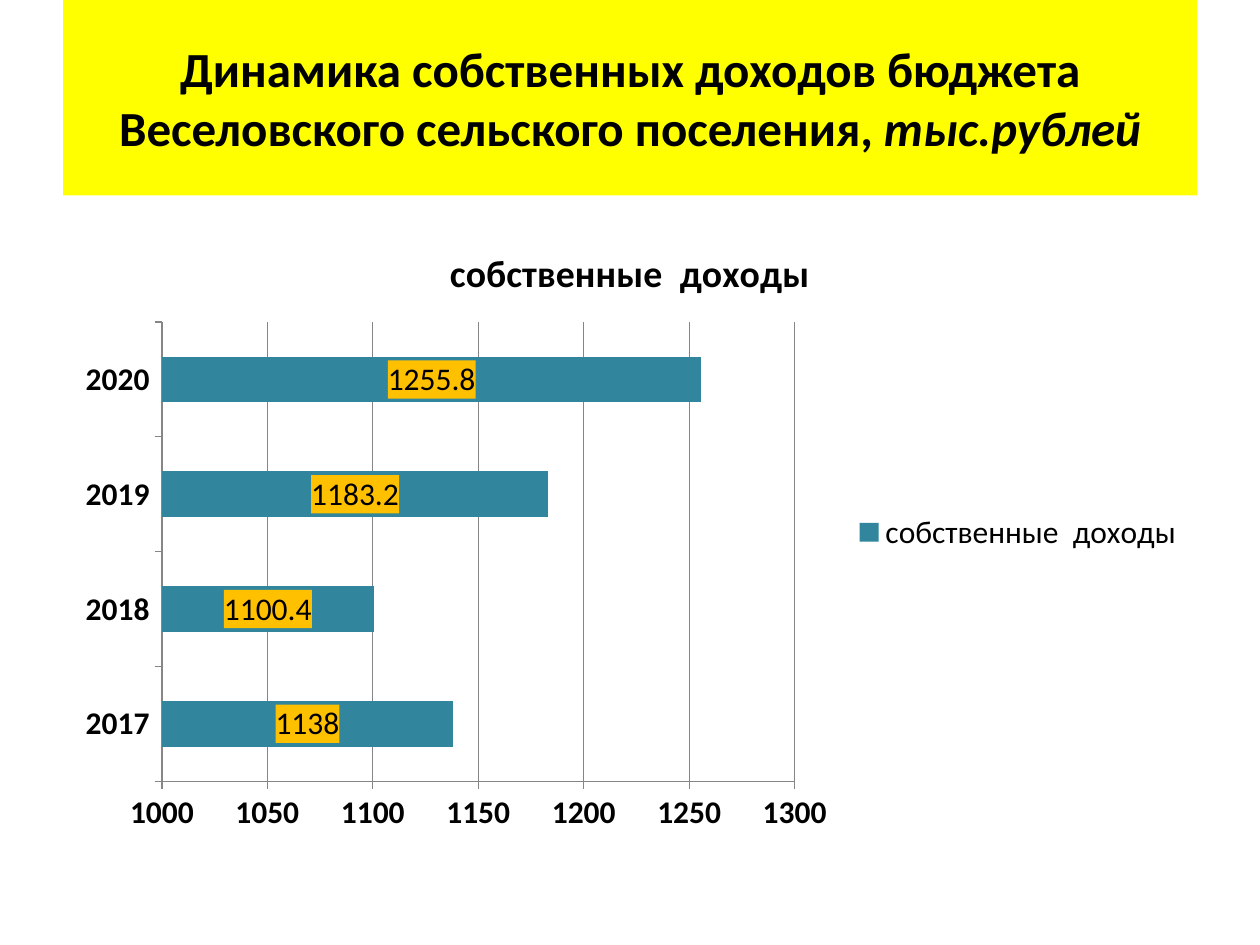
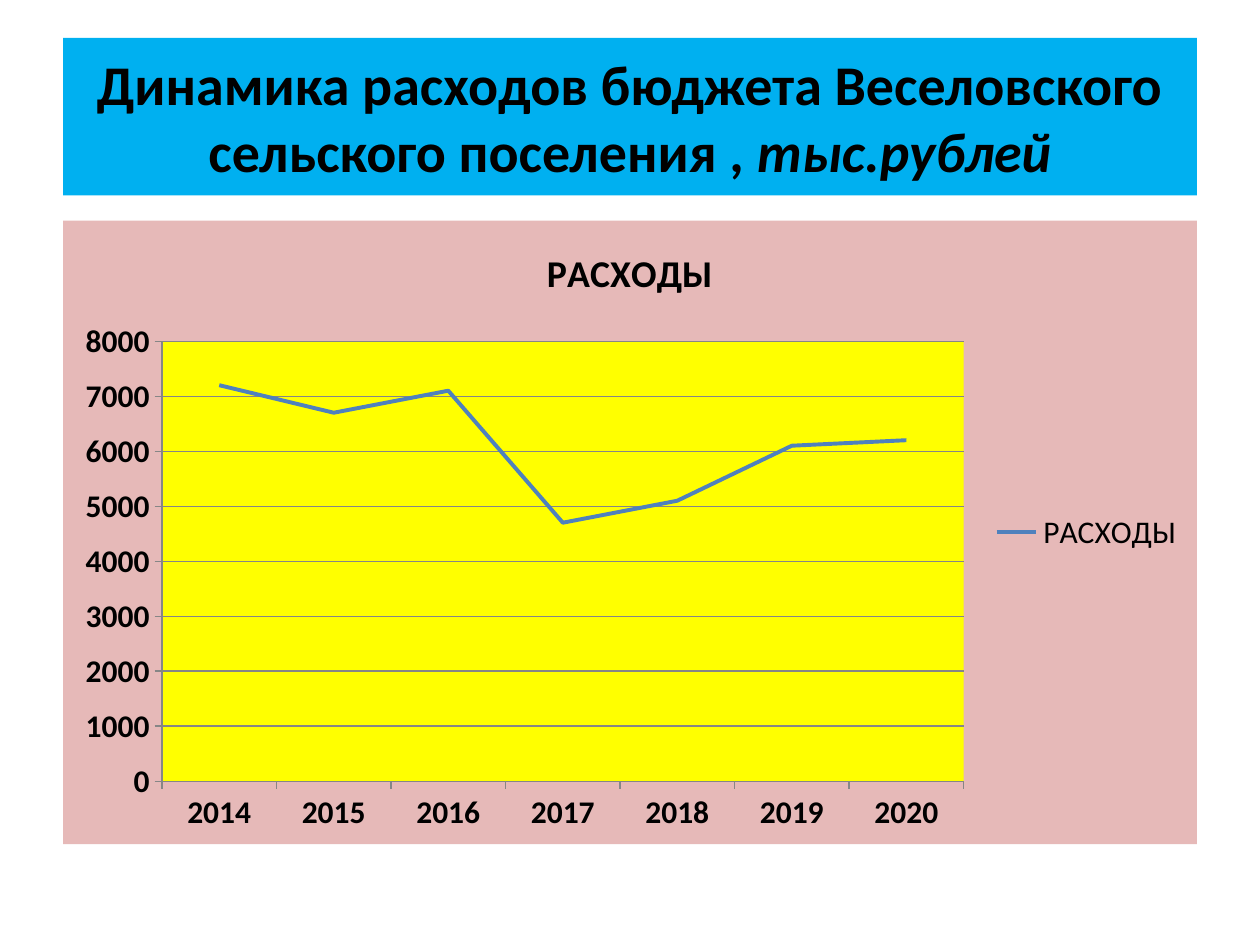
from dataclasses import dataclass
from typing import Optional

from lxml import etree
from pptx import Presentation
from pptx.chart.data import CategoryChartData
from pptx.dml.color import RGBColor
from pptx.enum.chart import (XL_CHART_TYPE, XL_LABEL_POSITION,
                             XL_LEGEND_POSITION, XL_TICK_MARK)
from pptx.enum.text import MSO_ANCHOR, MSO_AUTO_SIZE, PP_ALIGN
from pptx.oxml import parse_xml
from pptx.oxml.ns import nsdecls, qn
from pptx.util import Pt

BAR_STACKED = XL_CHART_TYPE.BAR_STACKED
LINE_STACKED = XL_CHART_TYPE.LINE_STACKED
LABEL_CENTER = XL_LABEL_POSITION.CENTER
LEGEND_RIGHT = XL_LEGEND_POSITION.RIGHT
TICK_OUTSIDE = XL_TICK_MARK.OUTSIDE
ANCHOR_MIDDLE = MSO_ANCHOR.MIDDLE
NO_AUTOFIT = MSO_AUTO_SIZE.NONE
ALIGN_CENTER = PP_ALIGN.CENTER

# Shared style, lengths in points
FONT = "Calibri"
BLACK = "000000"
YELLOW = "FFFF00"
AXIS_GRAY = "868686"
LABEL_ORANGE = "FFC000"
CHART_SIZE = 18
CHART_TITLE_SIZE = 21.6
LEFT, CONTENT_WIDTH = 36, 648
BAND_BOTTOM = 111.6
CHART_TOP, CHART_HEIGHT = 126, 356.4
UNIT = "тыс.рублей"


@dataclass(frozen=True)
class Band:
    text: str
    size: float
    top: float
    fill: str


@dataclass(frozen=True)
class BudgetChart:
    kind: XL_CHART_TYPE
    name: str
    first_year: int
    values: tuple[float, ...]
    color: str
    axis_min: float
    axis_max: float
    axis_step: float
    fill: Optional[str] = None
    plot_fill: Optional[str] = None


BUDGET_SLIDES = [
    (Band("Динамика собственных доходов бюджета Веселовского сельского поселения, ",
          28, 0, YELLOW),
     BudgetChart(BAR_STACKED, "собственные  доходы", 2017,
                 (1138, 1100.4, 1183.2, 1255.8), "31859C", 1000, 1300, 50)),
    (Band("Динамика расходов бюджета Веселовского сельского поселения , ",
          32, 21.6, "00B0F0"),
     BudgetChart(LINE_STACKED, "РАСХОДЫ", 2014,
                 (7200, 6700, 7100, 4700, 5100, 6100, 6200), "4F81BD",
                 0, 8000, 1000, fill="E6B9B8", plot_fill=YELLOW)),
]


def rgb(color: str) -> RGBColor:
    return RGBColor.from_string(color)


def format_font(font, size: float, bold: bool = False, italic: bool = False) -> None:
    font.name = FONT
    font.size = Pt(size)
    font.bold = bold
    font.italic = italic
    font.color.rgb = rgb(BLACK)


def add_text(paragraph, text: str, **font_format) -> None:
    run = paragraph.add_run()
    run.text = text
    format_font(run.font, **font_format)


def chart_fill(color: str) -> etree.ElementBase:
    """Solid fill without outline for a part of a chart."""
    return parse_xml(
        f'<c:spPr {nsdecls("c", "a")}><a:solidFill><a:srgbClr val="{color}"/>'
        '</a:solidFill><a:ln><a:noFill/></a:ln></c:spPr>')


def draw_band(slide, band: Band) -> None:
    title = slide.shapes.title
    title.left, title.top = Pt(LEFT), Pt(band.top)
    title.width, title.height = Pt(CONTENT_WIDTH), Pt(BAND_BOTTOM - band.top)
    title.fill.solid()
    title.fill.fore_color.rgb = rgb(band.fill)
    frame = title.text_frame
    frame.word_wrap = True
    frame.auto_size = NO_AUTOFIT
    frame.vertical_anchor = ANCHOR_MIDDLE
    heading = frame.paragraphs[0]
    heading.alignment = ALIGN_CENTER
    add_text(heading, band.text, size=band.size, bold=True)
    add_text(heading, UNIT, size=band.size, bold=True, italic=True)


def style_line(line, color: str, width: float) -> None:
    line.color.rgb = rgb(color)
    line.width = Pt(width)


def style_axes(chart, budget: BudgetChart) -> None:
    years, amounts = chart.category_axis, chart.value_axis
    for axis in (years, amounts):
        axis.major_tick_mark = TICK_OUTSIDE
        format_font(axis.tick_labels.font, CHART_SIZE, bold=True)
        style_line(axis.format.line, AXIS_GRAY, 0.75)
    years.has_major_gridlines = False
    amounts.has_major_gridlines = True
    style_line(amounts.major_gridlines.format.line, AXIS_GRAY, 0.75)
    amounts.minimum_scale = budget.axis_min
    amounts.maximum_scale = budget.axis_max
    amounts.major_unit = budget.axis_step


def style_series(chart, budget: BudgetChart) -> None:
    plot = chart.plots[0]
    plot.vary_by_categories = False
    series = plot.series[0]
    if budget.kind == LINE_STACKED:
        series.smooth = False
        style_line(series.format.line, budget.color, 2.25)
        return
    plot.gap_width = 150
    plot.overlap = 100
    series.format.fill.solid()
    series.format.fill.fore_color.rgb = rgb(budget.color)
    labels = series.data_labels
    labels.show_value = True
    labels.position = LABEL_CENTER
    format_font(labels.font, CHART_SIZE)
    label_text = chart.element.find(f".//{qn('c:dLbls')}/{qn('c:txPr')}")
    label_text.addprevious(chart_fill(LABEL_ORANGE))


def draw_chart(slide, budget: BudgetChart) -> None:
    data = CategoryChartData()
    data.categories = [str(budget.first_year + i) for i in range(len(budget.values))]
    data.add_series(budget.name, budget.values)
    chart = slide.shapes.add_chart(budget.kind, Pt(LEFT), Pt(CHART_TOP),
                                   Pt(CONTENT_WIDTH), Pt(CHART_HEIGHT), data).chart
    format_font(chart.font, CHART_SIZE)

    # Title and legend
    chart.has_title = True
    add_text(chart.chart_title.text_frame.paragraphs[0], budget.name,
             size=CHART_TITLE_SIZE, bold=True)
    chart.chart_title.include_in_layout = False
    chart.has_legend = True
    chart.legend.position = LEGEND_RIGHT
    chart.legend.include_in_layout = False
    format_font(chart.legend.font, CHART_SIZE)

    style_axes(chart, budget)
    style_series(chart, budget)

    # Backgrounds
    if budget.fill:
        chart.element.find(qn("c:chart")).addnext(chart_fill(budget.fill))
    if budget.plot_fill:
        chart.element.find(f".//{qn('c:plotArea')}").append(chart_fill(budget.plot_fill))


def main() -> None:
    deck = Presentation()
    deck.slide_width, deck.slide_height = Pt(720), Pt(540)
    title_only = deck.slide_layouts[5]
    for band, budget in BUDGET_SLIDES:
        slide = deck.slides.add_slide(title_only)
        draw_band(slide, band)
        draw_chart(slide, budget)
    deck.save("out.pptx")


if __name__ == "__main__":
    main()
